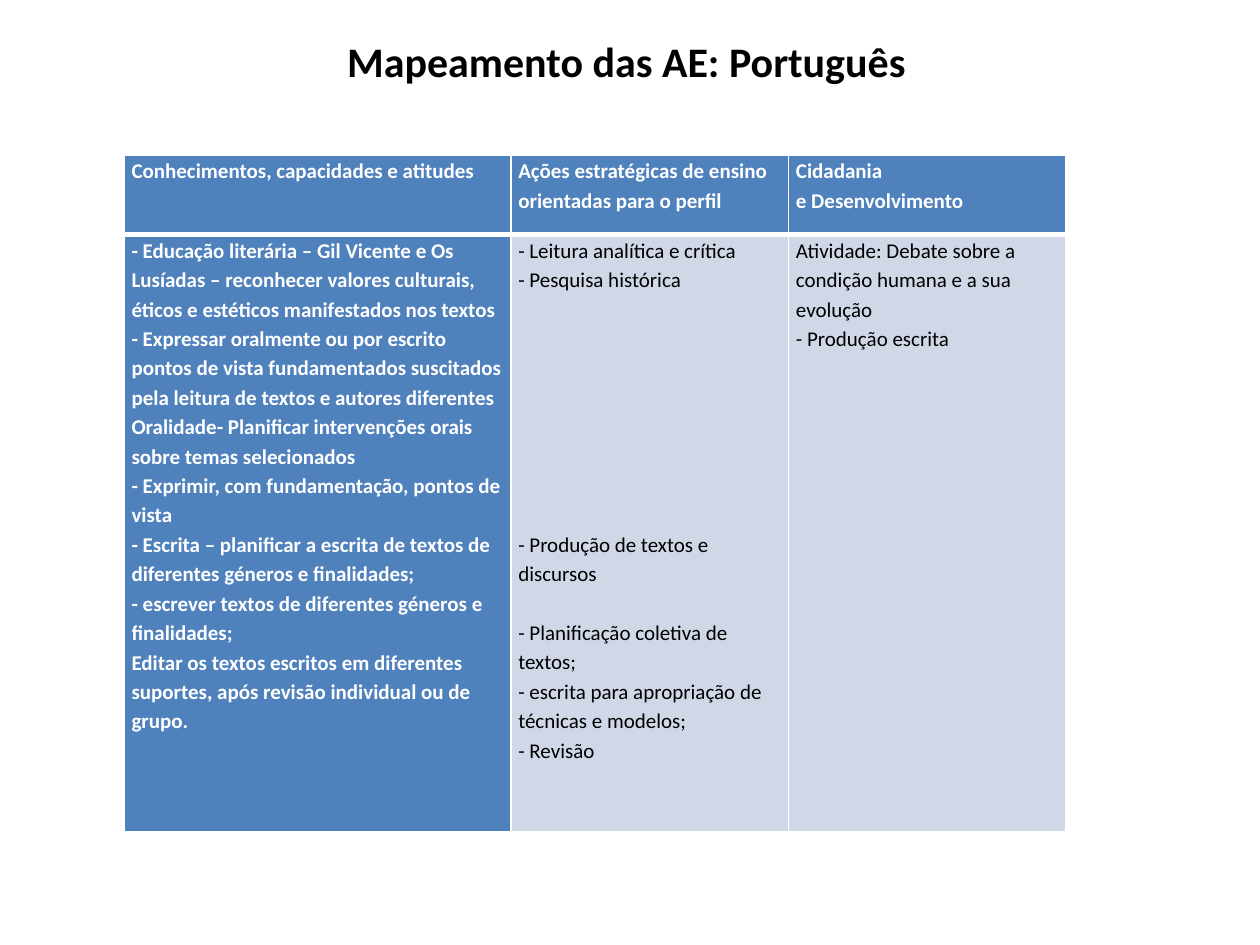
from lxml.etree import SubElement
from pptx import Presentation
from pptx.dml.color import RGBColor as Rgb
from pptx.enum.text import MSO_ANCHOR as Anchor, PP_ALIGN as Align
from pptx.oxml.ns import qn
from pptx.util import Pt

COLORS = {"head": "4F81BD", "body": "D0D8E8", "light": "FFFFFF", "dark": "000000"}
LINE = 16.8  # height of one text line in the table
WIDTHS = [221, 158.7, 158.7]
HEIGHTS = [45.4, 341.3]

# A paragraph is a text, or a text with the number of lines left free above it.
ROWS = [
    [
        ["Conhecimentos, capacidades e atitudes"],
        ["Ações estratégicas de ensino orientadas para o perfil"],
        ["Cidadania", "e Desenvolvimento"],
    ],
    [
        [
            "- Educação literária – Gil Vicente e Os Lusíadas – reconhecer valores "
            "culturais, éticos e estéticos manifestados nos textos",
            "- Expressar oralmente ou por escrito pontos de vista fundamentados "
            "suscitados pela leitura de textos e autores diferentes",
            "Oralidade- Planificar intervenções orais sobre temas selecionados",
            "- Exprimir, com fundamentação, pontos de vista",
            "- Escrita – planificar a escrita de textos de diferentes géneros e finalidades;",
            "- escrever textos de diferentes géneros e finalidades;",
            "Editar os textos escritos em diferentes suportes, após revisão individual "
            "ou de grupo.",
        ],
        [
            "- Leitura analítica e crítica",
            "- Pesquisa histórica",
            ("- Produção de textos e discursos", 8),
            ("- Planificação coletiva de textos;", 1),
            "- escrita para apropriação de técnicas e modelos;",
            "- Revisão",
        ],
        [
            "Atividade: Debate sobre a condição humana e a sua evolução",
            "- Produção escrita",
        ],
    ],
]


class Deck:
    font = "Calibri"

    def __init__(self):
        self.prs = Presentation()
        self.prs.slide_width, self.prs.slide_height = Pt(720), Pt(540)
        self.slide = self.prs.slides.add_slide(self.prs.slide_layouts[5])

    def style(self, para, size, color, bold):
        for run in para.runs:
            font = run.font
            font.name, font.size, font.bold = self.font, Pt(size), bold
            font.color.rgb = Rgb.from_string(COLORS[color])

    def title(self, text, left, top, width, height):
        box = self.slide.shapes.title
        box.left, box.top, box.width, box.height = map(Pt, (left, top, width, height))
        frame = box.text_frame
        frame.text = text
        frame.vertical_anchor = Anchor.MIDDLE
        para = frame.paragraphs[0]
        para.alignment = Align.CENTER
        self.style(para, 24, "dark", True)

    def table(self, rows, left, top):
        frame = self.slide.shapes.add_table(
            len(rows), len(WIDTHS), Pt(left), Pt(top), Pt(sum(WIDTHS)), Pt(sum(HEIGHTS)))
        table = frame.table
        for col, width in zip(table.columns, WIDTHS):
            col.width = Pt(width)
        for row, height in zip(table.rows, HEIGHTS):
            row.height = Pt(height)
        for r, row in enumerate(rows):
            for c, paras in enumerate(row):
                strong = r == 0 or c == 0
                cell = table.cell(r, c)
                self.border(cell, top=1 if r == 0 else 3, bottom=3 if r == 0 else 1)
                self.fill(cell, paras, strong)

    def fill(self, cell, paras, strong):
        cell.margin_left = cell.margin_right = Pt(4.3)
        cell.margin_top = cell.margin_bottom = 0
        cell.fill.solid()
        cell.fill.fore_color.rgb = Rgb.from_string(COLORS["head" if strong else "body"])
        frame = cell.text_frame
        for i, item in enumerate(paras):
            text, gap = (item, 0) if isinstance(item, str) else item
            para = frame.paragraphs[0] if i == 0 else frame.add_paragraph()
            para.text = text
            para.line_spacing = 1.15
            para.space_before = Pt(gap * LINE)
            self.style(para, 12, "light" if strong else "dark", strong)

    def border(self, cell, top, bottom):
        """Draw the cell's borders; must come before its fill."""
        props = cell._tc.get_or_add_tcPr()
        for side, width in zip("LRTB", (1, 1, top, bottom)):
            line = SubElement(props, qn("a:ln" + side), w=str(Pt(width)))
            solid = SubElement(line, qn("a:solidFill"))
            SubElement(solid, qn("a:srgbClr"), val=COLORS["light"])


def main():
    deck = Deck()
    deck.title("Mapeamento das AE: Português ", 36.7, 15, 648, 39.6)
    deck.table(ROWS, 70.9, 88.6)
    deck.prs.save("out.pptx")


if __name__ == "__main__":
    main()
